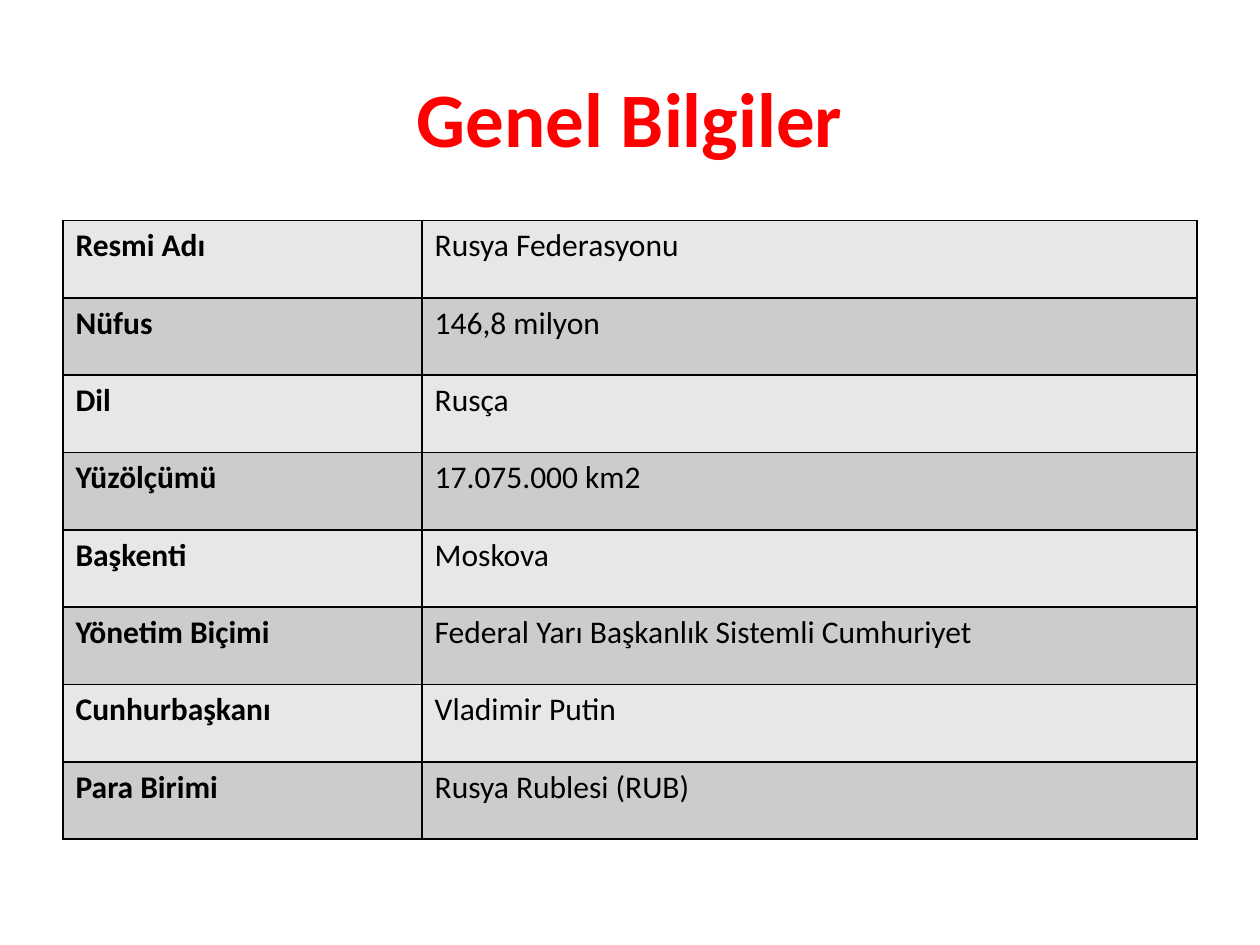
from typing import NamedTuple

from lxml import etree
from pptx import Presentation
from pptx.dml.color import RGBColor
from pptx.enum.text import MSO_ANCHOR, PP_ALIGN
from pptx.oxml.ns import qn
from pptx.util import Pt

CENTER = PP_ALIGN.CENTER
MIDDLE = MSO_ANCHOR.MIDDLE
TOP = MSO_ANCHOR.TOP

RED = RGBColor(0xFF, 0x00, 0x00)
BLACK = RGBColor(0x00, 0x00, 0x00)
LIGHT_GRAY = RGBColor(0xE7, 0xE7, 0xE7)
MID_GRAY = RGBColor(0xCC, 0xCC, 0xCC)
BANDS = (LIGHT_GRAY, MID_GRAY)

LEFT, WIDTH = 36, 648
COLUMN_WIDTHS = (205.2, 442.8)
ROW_HEIGHT = 44.2
BORDER_TAGS = ("a:lnL", "a:lnR", "a:lnT", "a:lnB")


class Fact(NamedTuple):
    label: str
    value: str


FACTS = (
    Fact("Resmi Adı", "Rusya Federasyonu"),
    Fact("Nüfus", "146,8 milyon"),
    Fact("Dil", "Rusça"),
    Fact("Yüzölçümü", "17.075.000 km2"),
    Fact("Başkenti", "Moskova"),
    Fact("Yönetim Biçimi", "Federal Yarı Başkanlık Sistemli Cumhuriyet"),
    Fact("Cunhurbaşkanı", "Vladimir Putin"),
    Fact("Para Birimi", "Rusya Rublesi (RUB)"),
)


def write(frame, text: str, size: float, color: RGBColor, bold: bool) -> None:
    span = frame.paragraphs[0].add_run()
    span.text = text
    span.font.color.rgb = color
    for name, value in {"name": "Calibri", "size": Pt(size), "bold": bold}.items():
        setattr(span.font, name, value)


def add_borders(cell, color: RGBColor, width: float) -> None:
    # Borders come before the fill in the cell properties
    properties = cell._tc.get_or_add_tcPr()
    for index, tag in enumerate(BORDER_TAGS):
        line = etree.Element(qn(tag), w=str(Pt(width)))
        fill = etree.SubElement(line, qn("a:solidFill"))
        etree.SubElement(fill, qn("a:srgbClr"), val=str(color))
        properties.insert(index, line)


def add_title(page, text: str) -> None:
    title = page.shapes.title
    place = {"left": LEFT, "top": 21.6, "width": WIDTH, "height": 90}
    for name, value in place.items():
        setattr(title, name, Pt(value))
    title.text_frame.vertical_anchor = MIDDLE
    title.text_frame.paragraphs[0].alignment = CENTER
    write(title.text_frame, text, 44, RED, True)


def add_fact_table(page, facts: tuple[Fact, ...]) -> None:
    frame = page.shapes.add_table(
        len(facts), len(COLUMN_WIDTHS),
        Pt(LEFT), Pt(126), Pt(WIDTH), Pt(ROW_HEIGHT * len(facts)),
    )
    table = frame.table
    for column, width in zip(table.columns, COLUMN_WIDTHS):
        column.width = Pt(width)
    for row_index, fact in enumerate(facts):
        table.rows[row_index].height = Pt(ROW_HEIGHT)
        for column_index, text in enumerate(fact):
            cell = table.cell(row_index, column_index)
            cell.vertical_anchor = TOP
            cell.fill.solid()
            cell.fill.fore_color.rgb = BANDS[row_index % 2]
            add_borders(cell, BLACK, 1)
            write(cell.text_frame, text, 18, BLACK, column_index == 0)


def main() -> None:
    deck = Presentation()
    deck.slide_width, deck.slide_height = Pt(720), Pt(540)
    page = deck.slides.add_slide(deck.slide_layouts[5])  # title only
    add_title(page, "Genel Bilgiler")
    add_fact_table(page, FACTS)
    deck.save("out.pptx")


if __name__ == "__main__":
    main()
